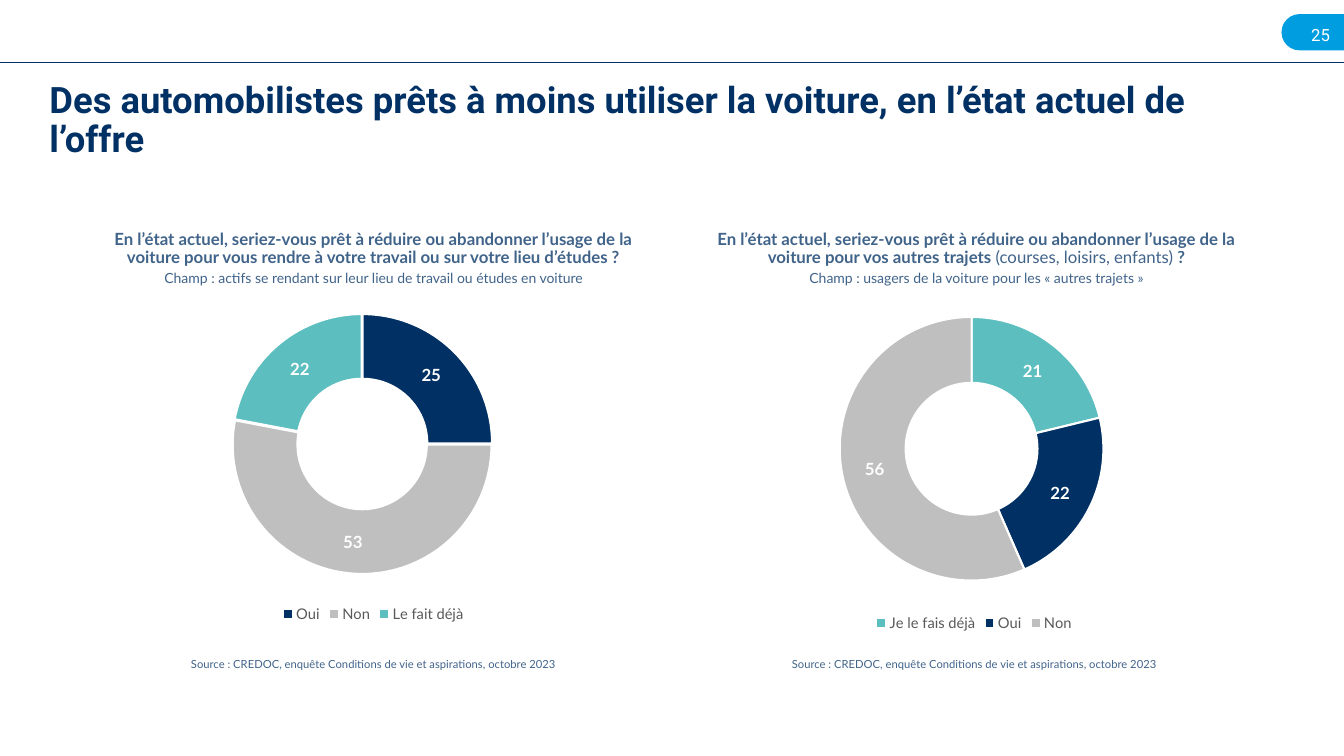
from lxml import etree
from pptx import Presentation
from pptx import util as u
from pptx.chart.data import CategoryChartData
from pptx.dml.color import RGBColor
from pptx.enum import chart as charts, shapes, text
from pptx.oxml import parse_xml
from pptx.oxml.ns import nsdecls, qn

NAVY = RGBColor(0x00, 0x30, 0x64)
BLUE = RGBColor(0x00, 0x9E, 0xE0)
TEAL = RGBColor(0x5D, 0xBE, 0xBF)
SILVER = RGBColor(0xBF, 0xBF, 0xBF)
GREY = RGBColor(0x59, 0x59, 0x59)
WHITE = RGBColor(0xFF, 0xFF, 0xFF)


class SurveySlide:
    heading_font = "Roboto"
    body_font = "Lato"

    def __init__(self, deck):
        self.slide = deck.slides.add_slide(deck.slide_layouts[5])

    def style(self, font, name, size, color, bold=False):
        font.name, font.size, font.bold = name, u.Pt(size), bold
        font.color.rgb = color

    def place(self, shape, left, top, width, height):
        shape.left, shape.top = u.Inches(left), u.Inches(top)
        shape.width, shape.height = u.Inches(width), u.Inches(height)

    def fill_text(self, box, runs, font, size, color, align, opacity=100,
                  spacing=0.9, inset=0.03, anchor=text.MSO_ANCHOR.TOP):
        frame = box.text_frame
        frame.word_wrap = True
        frame.auto_size = text.MSO_AUTO_SIZE.NONE
        frame.vertical_anchor = anchor
        frame.margin_left = frame.margin_right = u.Inches(0.1)
        frame.margin_top = frame.margin_bottom = u.Inches(inset)
        paragraph = frame.paragraphs[0]
        paragraph.alignment = align
        paragraph.line_spacing = spacing
        for words, bold in runs:
            run = paragraph.add_run()
            run.text = words
            self.style(run.font, font, size, color, bold)
            if opacity < 100:
                tint = run._r.find(".//" + qn("a:srgbClr"))
                etree.SubElement(tint, qn("a:alpha")).set("val", str(opacity * 1000))

    def title(self, words):
        heading = self.slide.shapes.title
        self.place(heading, 0.39, 0.76, 12.46, 0.84)
        self.fill_text(heading, [(words, True)], self.heading_font, 26, NAVY,
                       text.PP_ALIGN.LEFT, inset=0.05)

    def caption(self, left, top, width, height, size, *runs):
        box = self.slide.shapes.add_textbox(*map(u.Inches, (left, top, width, height)))
        self.fill_text(box, runs, self.body_font, size, NAVY,
                       text.PP_ALIGN.CENTER, opacity=75)

    def page_tab(self, number):
        tab = self.slide.shapes.add_shape(
            shapes.MSO_SHAPE.ROUNDED_RECTANGLE,
            *map(u.Inches, (12.71, 0.14, 2.02, 0.36)))
        tab.adjustments[0] = 0.5
        tab.shadow.inherit = False
        tab.fill.solid()
        tab.fill.fore_color.rgb = BLUE
        tab.line.fill.background()
        page = self.slide.shapes.add_textbox(*map(u.Inches, (12.7, 0.18, 0.59, 0.33)))
        self.fill_text(page, [(number, False)], self.heading_font, 12, WHITE,
                       text.PP_ALIGN.RIGHT, spacing=1.0, anchor=text.MSO_ANCHOR.MIDDLE)

    def rule(self, start, end, top):
        line = self.slide.shapes.add_connector(
            shapes.MSO_CONNECTOR.STRAIGHT, *map(u.Inches, (start, top, end, top)))
        line.line.color.rgb = NAVY
        line.line.width = u.Pt(1)
        etree.SubElement(line._element.spPr, qn("a:effectLst"))

    def doughnut(self, place, answers, layout, explosion=0):
        data = CategoryChartData()
        data.categories = [answer for answer, _, _ in answers]
        data.add_series("Series 1", [share for _, share, _ in answers])
        chart = self.slide.shapes.add_chart(
            charts.XL_CHART_TYPE.DOUGHNUT, *map(u.Inches, place), data).chart
        chart.has_title = False
        chart.font.name, chart.font.size = self.body_font, u.Pt(10.5)
        chart.has_legend = True
        chart.legend.position = charts.XL_LEGEND_POSITION.BOTTOM
        chart.legend.include_in_layout = False
        self.style(chart.legend.font, self.body_font, 10.5, GREY)

        plot = chart.plots[0]
        plot.vary_by_categories = True
        shares = plot.series[0]
        for index, (_, _, color) in enumerate(answers):
            slice_format = shares.points[index].format
            slice_format.fill.solid()
            slice_format.fill.fore_color.rgb = color
            slice_format.line.color.rgb = WHITE
            slice_format.line.width = u.Pt(1.5)
        labels = shares.data_labels
        labels.show_value = True
        labels.show_percentage = False
        self.style(labels.font, self.body_font, 12, WHITE, True)

        space = chart._chartSpace
        space.find(".//" + qn("c:holeSize")).set("val", "75")
        if explosion:
            burst = parse_xml(f'<c:explosion {nsdecls("c")} val="{explosion}"/>')
            space.find(".//" + qn("c:dPt")).addprevious(burst)
        area = space.find(".//" + qn("c:plotArea"))
        for previous in area.findall(qn("c:layout")):
            area.remove(previous)
        modes = '<c:layoutTarget val="inner"/><c:xMode val="edge"/><c:yMode val="edge"/>'
        sizes = "".join(f'<c:{key} val="{value}"/>' for key, value in zip("xywh", layout))
        area.insert(0, parse_xml(
            f'<c:layout {nsdecls("c")}><c:manualLayout>{modes}{sizes}'
            '</c:manualLayout></c:layout>'))


def main():
    deck = Presentation()
    deck.slide_width, deck.slide_height = u.Inches(13.33), u.Inches(7.5)
    page = SurveySlide(deck)
    page.page_tab("25")
    page.rule(13.43, -0.26, 0.62)
    page.title("Des automobilistes prêts à moins utiliser la voiture, en l’état actuel de l’offre")

    opening = "En l’état actuel, seriez-vous prêt à réduire ou abandonner l’usage de la voiture pour "
    source = "Source : CREDOC, enquête Conditions de vie et aspirations, octobre 2023"
    surveys = [
        (0.84, 0.9,
         [(opening + "vous rendre à votre travail ou sur votre lieu d’études ?", True)],
         "Champ : actifs se rendant sur leur lieu de travail ou études en voiture",
         2.95, 3.27,
         [("Oui", 25, NAVY), ("Non", 53, SILVER), ("Le fait déjà", 22, TEAL)],
         (0.25, 0.05, 0.46, 0.79), 1),
        (6.82, 6.86,
         [(opening + "vos autres trajets ", True),
          ("(courses, loisirs, enfants)", False), (" ?", True)],
         "Champ : usagers de la voiture pour les « autres trajets »",
         3.08, 3.23,
         [("Je le fais déjà", 21, TEAL), ("Oui", 22, NAVY), ("Non", 56, SILVER)],
         (0.26, 0.02, 0.47, 0.81), 0),
    ]
    for left, chart_left, question, scope, top, height, answers, layout, explosion in surveys:
        page.caption(left, 2.26, 5.73, 0.23, 12, *question)
        page.caption(left, 2.66, 5.73, 0.23, 10, (scope, False))
        page.doughnut((chart_left, top, 5.61, height), answers, layout, explosion)
        page.caption(chart_left, 6.51, 5.61, 0.16, 8, (source, False))
    deck.save("out.pptx")


if __name__ == "__main__":
    main()
